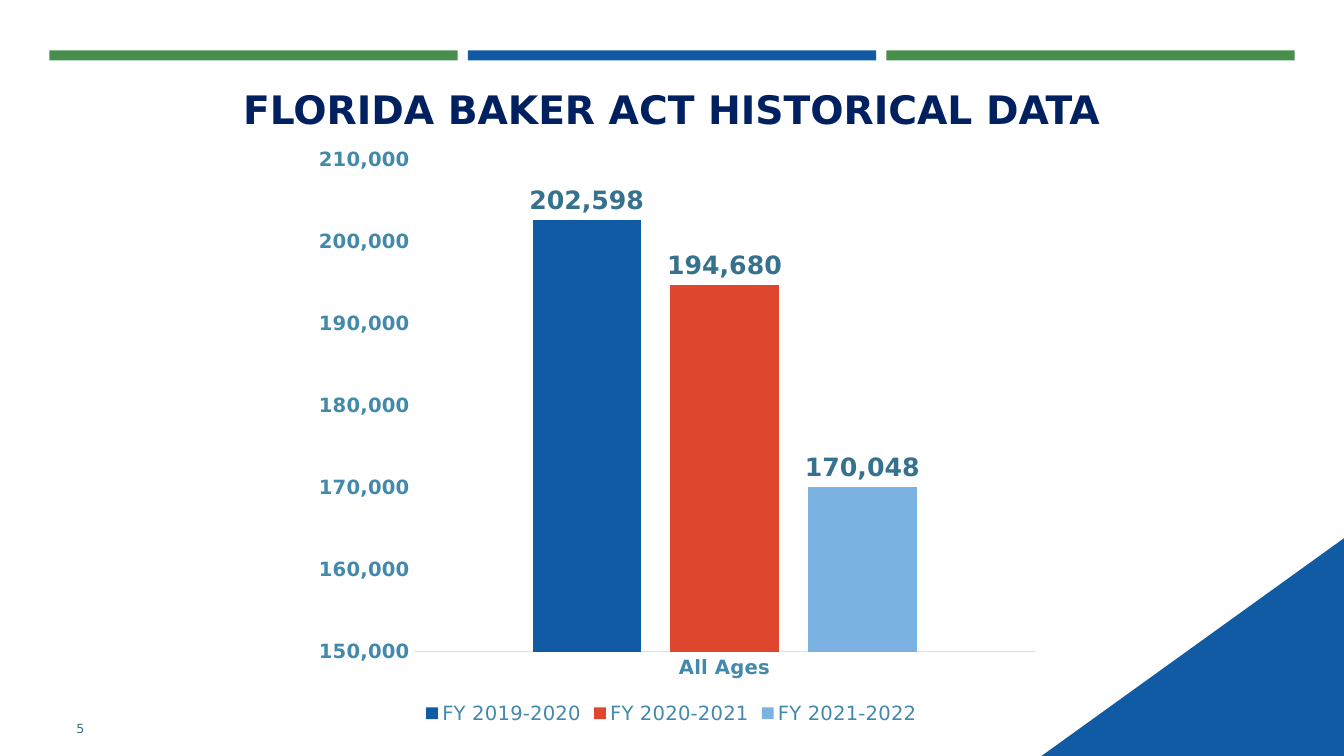
from lxml.etree import SubElement
from pptx import Presentation
from pptx.chart.data import CategoryChartData
from pptx.dml.color import RGBColor
from pptx.enum.chart import XL_CHART_TYPE, XL_LABEL_POSITION, XL_LEGEND_POSITION, XL_TICK_MARK
from pptx.enum.shapes import MSO_SHAPE
from pptx.enum.text import MSO_ANCHOR, PP_ALIGN
from pptx.oxml import parse_xml
from pptx.oxml.ns import nsdecls, qn
from pptx.util import Inches, Pt

FONT = "DejaVu Sans"
COLORS = {
    "green": "488F4D",
    "blue": "115BA4",
    "red": "DF462E",
    "sky": "7CB2E1",
    "navy": "002060",
    "teal": "36718D",
    "axis": "4289AB",
    "line": "D2E4EE",
    "text": "193441",
}
YEARS = [
    ("FY 2019-2020", 202598, "blue"),
    ("FY 2020-2021", 194680, "red"),
    ("FY 2021-2022", 170048, "sky"),
]


def color(name):
    return RGBColor.from_string(COLORS[name])


def paint(shape, name):
    shape.shadow.inherit = False
    shape.fill.solid()
    shape.fill.fore_color.rgb = color(name)
    shape.line.fill.background()


def style(font, size, name, bold=False):
    font.name = FONT
    font.size = Pt(size)
    font.bold = bold
    font.color.rgb = color(name)


def add_bar(slide, left, name):
    bar = slide.shapes.add_shape(
        MSO_SHAPE.RECTANGLE, Inches(left), Inches(0.5), Inches(4.05), Inches(0.1))
    paint(bar, name)


def add_corner(slide):
    build = slide.shapes.build_freeform(Inches(10.33), Inches(7.5))
    build.add_line_segments(
        [(Inches(13.33), Inches(5.34)), (Inches(13.33), Inches(7.5))], close=True)
    paint(build.convert_to_shape(), "blue")


def add_text(slide, box, text, size, name, bold=False,
             align=PP_ALIGN.LEFT, anchor=MSO_ANCHOR.TOP):
    frame = slide.shapes.add_textbox(*map(Inches, box)).text_frame
    frame.word_wrap = True
    frame.vertical_anchor = anchor
    para = frame.paragraphs[0]
    para.alignment = align
    run = para.add_run()
    run.text = text
    style(run.font, size, name, bold)


def place_plot(chart, **sides):
    plot = chart._chartSpace.chart.plotArea
    for old in plot.findall(qn("c:layout")):
        plot.remove(old)
    layout = parse_xml(f"<c:layout {nsdecls('c')}/>")
    manual = SubElement(layout, qn("c:manualLayout"))
    parts = {"layoutTarget": "inner", "xMode": "edge", "yMode": "edge", **sides}
    for tag, value in parts.items():
        SubElement(manual, qn(f"c:{tag}")).set("val", str(value))
    plot.insert(0, layout)


def style_axis(axis):
    axis.has_major_gridlines = False
    axis.major_tick_mark = XL_TICK_MARK.NONE
    axis.minor_tick_mark = XL_TICK_MARK.NONE
    style(axis.tick_labels.font, 14, "axis", True)


def style_series(series, name):
    series.format.fill.solid()
    series.format.fill.fore_color.rgb = color(name)
    labels = series.data_labels
    labels.show_value = True
    labels.position = XL_LABEL_POSITION.OUTSIDE_END
    labels.number_format = "#,##0"
    labels.number_format_is_linked = False
    style(labels.font, 18, "teal", True)


def add_chart(slide):
    data = CategoryChartData(number_format="#,##0")
    data.categories = ["All Ages"]
    for year, value, _ in YEARS:
        data.add_series(year, [value])
    chart = slide.shapes.add_chart(
        XL_CHART_TYPE.COLUMN_CLUSTERED, Inches(2.9), Inches(1.34),
        Inches(7.52), Inches(5.89), data).chart
    style(chart.font, 10, "text")
    chart.has_title = False
    chart.has_legend = True
    chart.legend.position = XL_LEGEND_POSITION.BOTTOM
    chart.legend.include_in_layout = False
    style(chart.legend.font, 14, "axis")

    plot = chart.plots[0]
    plot.vary_by_categories = False
    plot.gap_width = 219
    plot.overlap = -27
    for series, (_, _, name) in zip(plot.series, YEARS):
        style_series(series, name)

    base, scale = chart.category_axis, chart.value_axis
    style_axis(base)
    base.format.line.color.rgb = color("line")
    base.format.line.width = Pt(0.75)
    style_axis(scale)
    scale.format.line.fill.background()
    scale.minimum_scale = 150000
    scale.maximum_scale = 210000
    scale.major_unit = 10000
    scale.tick_labels.number_format = "#,##0"
    scale.tick_labels.number_format_is_linked = False
    place_plot(chart, x=0.16, y=0.04, w=0.82, h=0.83)


def main():
    deck = Presentation()
    deck.slide_width = Inches(13.33)
    deck.slide_height = Inches(7.5)
    slide = deck.slides.add_slide(deck.slide_layouts[6])
    for index, name in enumerate(["green", "blue", "green"]):
        add_bar(slide, 0.49 + 4.15 * index, name)
    add_corner(slide)
    add_text(slide, (0.63, 0.8, 12.06, 1.08), "FLORIDA BAKER ACT HISTORICAL DATA",
             28, "navy", True, PP_ALIGN.CENTER)
    add_chart(slide)
    add_text(slide, (0.66, 7.03, 1.15, 0.4), "5", 9, "teal", anchor=MSO_ANCHOR.MIDDLE)
    deck.save("out.pptx")


if __name__ == "__main__":
    main()
